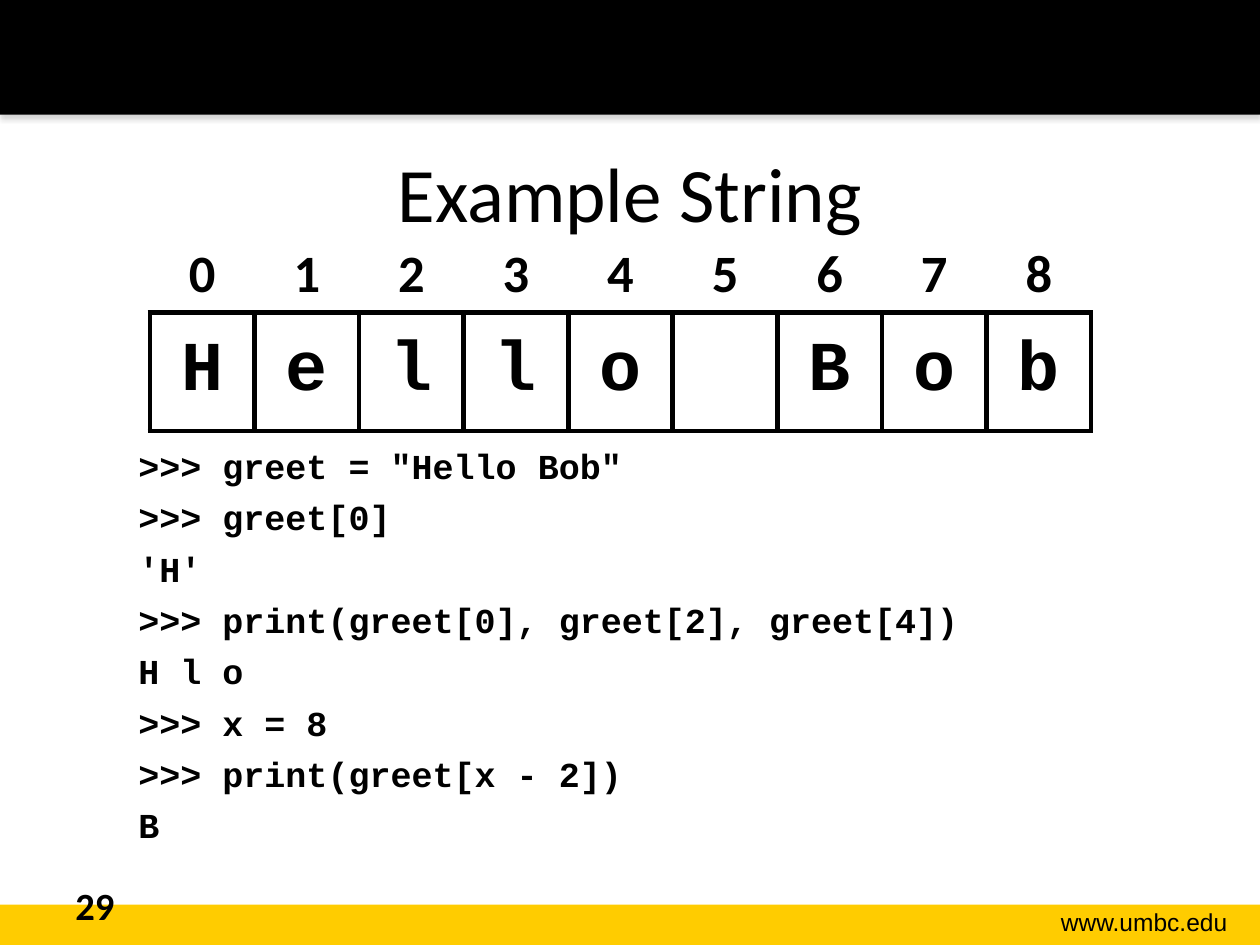
from pptx import Presentation
from pptx.dml.color import RGBColor
from pptx.enum.shapes import MSO_SHAPE
from pptx.enum.text import MSO_ANCHOR, PP_ALIGN
from pptx.oxml import parse_xml
from pptx.oxml.ns import nsdecls
from pptx.util import Inches, Pt

BLACK = RGBColor(0x00, 0x00, 0x00)
WHITE = RGBColor(0xFF, 0xFF, 0xFF)
GOLD = RGBColor(0xFF, 0xCC, 0x00)
RECT = MSO_SHAPE.RECTANGLE
TOP, MIDDLE, BOTTOM = MSO_ANCHOR.TOP, MSO_ANCHOR.MIDDLE, MSO_ANCHOR.BOTTOM
LEFT, CENTER, RIGHT = PP_ALIGN.LEFT, PP_ALIGN.CENTER, PP_ALIGN.RIGHT

TITLE = {"name": "Calibri", "size": Pt(44)}
INDEX = {"name": "Calibri", "size": Pt(30), "bold": True}
LETTER = {"name": "Courier New", "size": Pt(40), "bold": True}
CODE = {"name": "Courier New", "size": Pt(20), "bold": True}
NUMBER = {"name": "Calibri", "size": Pt(22), "bold": True}
ADDRESS = {"name": "Arial", "size": Pt(14)}

GREETING = "Hello Bob"
SESSION = [
    '>>> greet = "Hello Bob"',
    ">>> greet[0]",
    "'H'",
    ">>> print(greet[0], greet[2], greet[4])",
    "H l o",
    ">>> x = 8",
    ">>> print(greet[x - 2])",
    "B",
]


class SlideBuilder:
    def __init__(self, slide):
        self.slide = slide

    def add_run(self, p, text, style, align):
        p.alignment = align
        r = p.add_run()
        r.text = text
        for name, value in style.items():
            setattr(r.font, name, value)
        r.font.color.rgb = BLACK

    def band(self, top, height, color, shadow=False):
        sp = self.slide.shapes.add_shape(RECT, 0, Inches(top), Inches(10), Inches(height))
        sp.shadow.inherit = False
        sp.fill.solid()
        sp.fill.fore_color.rgb = color
        sp.line.fill.background()
        if shadow:
            effects = sp.element.spPr.find("{*}effectLst")
            effects.append(parse_xml(
                f'<a:outerShdw {nsdecls("a")} blurRad="{Pt(3.1)}" dist="{Pt(1.8)}" '
                'dir="5400000" rotWithShape="0"><a:srgbClr val="808080">'
                '<a:alpha val="35000"/></a:srgbClr></a:outerShdw>'))

    def text(self, box, lines, style, align=LEFT, anchor=TOP, gap=0):
        tf = self.slide.shapes.add_textbox(*map(Inches, box)).text_frame
        tf.word_wrap = True
        tf.vertical_anchor = anchor
        for i, line in enumerate(lines):
            p = tf.add_paragraph() if i else tf.paragraphs[0]
            p.space_before = Pt(gap if i else 0)
            self.add_run(p, line, style, align)

    def borders(self, cell, visible):
        tc_pr = cell._tc.get_or_add_tcPr()
        for side in "LRTB":
            paint = '<a:solidFill><a:srgbClr val="000000"/></a:solidFill>'
            if side not in visible:
                paint = "<a:noFill/>"
            tc_pr.append(parse_xml(
                f'<a:ln{side} {nsdecls("a")} w="{Pt(3)}">{paint}</a:ln{side}>'))

    def cell(self, cell, text, style, anchor, visible, fill=None):
        self.borders(cell, visible)
        if fill is None:
            cell.fill.background()
        else:
            cell.fill.solid()
            cell.fill.fore_color.rgb = fill
        cell.vertical_anchor = anchor
        if text.strip():
            self.add_run(cell.text_frame.paragraphs[0], text, style, CENTER)

    def string_table(self, box, heights, string):
        table = self.slide.shapes.add_table(2, len(string), *map(Inches, box)).table
        table.first_row = table.horz_banding = False
        for row, height in zip(table.rows, heights):
            row.height = Inches(height)
        for i, letter in enumerate(string):
            table.columns[i].width = Inches(box[2] / len(string))
            self.cell(table.cell(0, i), str(i), INDEX, BOTTOM, "B")
            self.cell(table.cell(1, i), letter, LETTER, MIDDLE, "LRTB", WHITE)


def main():
    prs = Presentation()
    prs.slide_width, prs.slide_height = Inches(10), Inches(7.5)
    s = SlideBuilder(prs.slides.add_slide(prs.slide_layouts[6]))

    # Header and footer bands
    s.band(7.18, 0.32, GOLD)
    s.band(0, 0.91, BLACK, shadow=True)
    s.text((7.85, 7.15, 1.99, 0.34), ["www.umbc.edu"], ADDRESS, RIGHT)

    # Title
    s.text((0.5, 0.9, 9, 1.25), ["Example String"], TITLE, CENTER, MIDDLE)

    # Interpreter session
    s.text((1, 3.48, 8.5, 3.28), SESSION, CODE, gap=5.3)

    # Slide number
    s.text((0.5, 6.95, 2.33, 0.4), ["29"], NUMBER)

    # Indexed characters
    s.string_table((1.19, 1.82, 7.47, 1.6), (0.66, 0.94), GREETING)

    prs.save("out.pptx")


if __name__ == "__main__":
    main()
